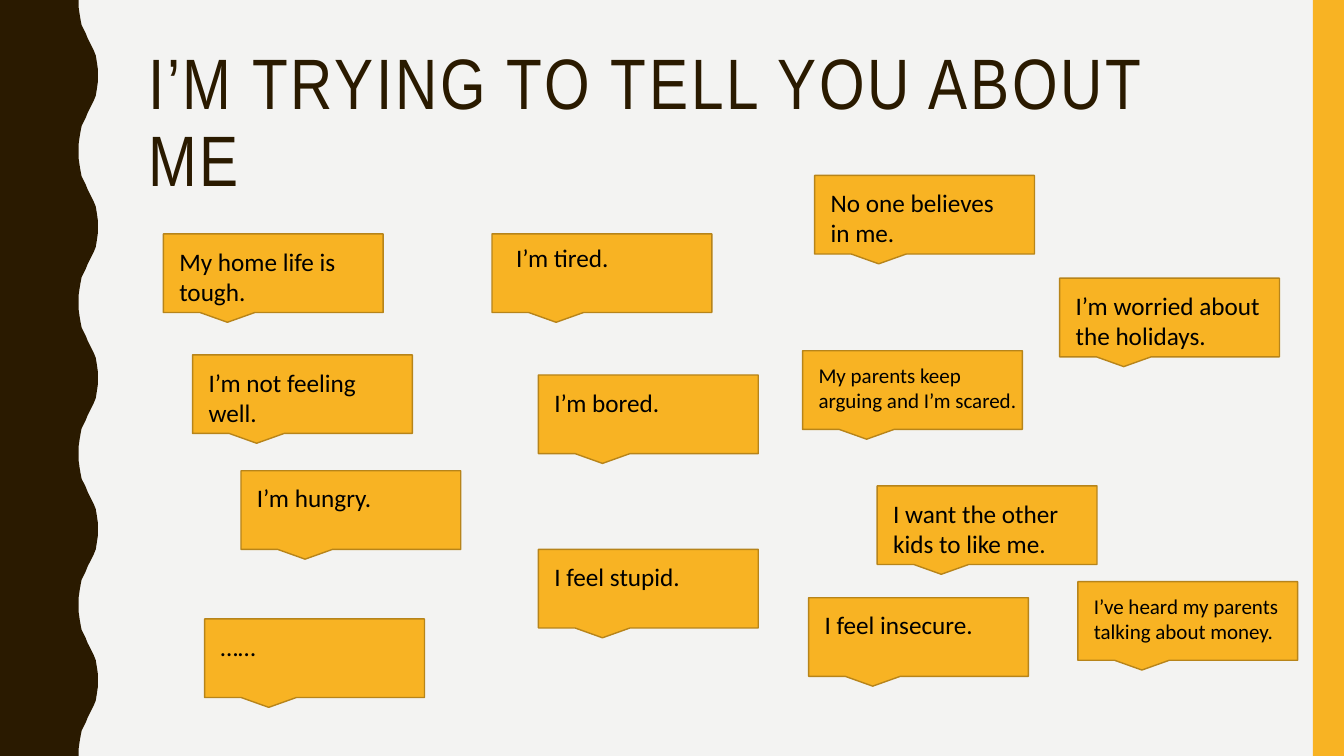
from pptx import Presentation
from pptx.dml.color import RGBColor
from pptx.enum.shapes import MSO_SHAPE as Shape
from pptx.enum.text import MSO_ANCHOR as Anchor, MSO_AUTO_SIZE as AutoSize
from pptx.util import Inches, Pt

WIDTH, HEIGHT = 13.33, 7.5
BROWN, AMBER, AMBER_EDGE = "2A1A00", "F8B323", "B7841A"
PAPER, BLACK = "F3F3F2", "000000"

# One half wave of the left border: x and y in inches
HALF_WAVE = [(0.78, 0), (0.78, 0.07), (0.79, 0.14), (0.8, 0.2), (0.81, 0.25),
             (0.83, 0.29), (0.85, 0.33), (0.87, 0.38), (0.89, 0.42), (0.91, 0.46),
             (0.93, 0.5), (0.95, 0.55), (0.96, 0.61), (0.97, 0.68), (0.97, 0.75)]
WAVE_LENGTH, WAVE_COUNT = 1.5, 5

CALLOUT_SIZE = (2.18, 0.78)
# Callout left and top, wording, and changes to the usual text format
CALLOUTS = [
    (1.62, 2.32, "My home life is tough.", {}),
    (4.88, 2.32, "I’m tired.", {"shift": (0.14, 0.04)}),
    (2.39, 4.67, "I’m hungry.", {}),
    (7.96, 3.48, "My parents keep arguing and I’m scared.", {"size": 15, "width": 2.18}),
    (5.34, 5.45, "I feel stupid.", {}),
    (8.7, 4.82, "I want the other kids to like me.", {}),
    (8.08, 1.74, "No one believes in me.", {}),
    (5.34, 3.72, "I’m bored.", {}),
    (1.91, 3.52, "I’m not feeling well.", {}),
    (8.02, 5.93, "I feel insecure.", {}),
    (2.03, 6.14, "……", {}),
    (10.51, 2.76, "I’m worried about the holidays.", {}),
    (10.69, 5.77, "I’ve heard my parents talking about money.", {"size": 15}),
]


def color(value):
    return RGBColor.from_string(value)


def assign(target, values):
    for name, value in values.items():
        setattr(target, name, value)


class Painter:
    """Holds the style and the current slide."""

    title_font, body_font = "Arial Narrow", "Calibri"

    def __init__(self, page):
        self.page = page

    def background(self, fill):
        self.page.background.fill.solid()
        self.page.background.fill.fore_color.rgb = color(fill)

    def paint(self, shape, fill, edge=None):
        shape.shadow.inherit = False
        shape.fill.solid()
        shape.fill.fore_color.rgb = color(fill)
        if edge:
            shape.line.color.rgb = color(edge)
            shape.line.width = Pt(1)
        else:
            shape.line.fill.background()

    def preset(self, kind, left, top, width, height, fill, edge=None):
        place = map(Inches, (left, top, width, height))
        self.paint(self.page.shapes.add_shape(kind, *place), fill, edge)

    def outline(self, points, fill):
        start, *rest = [(Inches(x), Inches(y)) for x, y in points]
        builder = self.page.shapes.build_freeform(*start)
        builder.add_line_segments(rest, close=True)
        self.paint(builder.convert_to_shape(), fill)

    def text(self, left, top, width, height, words, font, size, fill,
             spacing=None, frame_format=None, para_format=None):
        place = map(Inches, (left, top, width, height))
        frame = self.page.shapes.add_textbox(*place).text_frame
        assign(frame, {"word_wrap": True, **(frame_format or {})})
        para = frame.paragraphs[0]
        assign(para, para_format or {})
        span = para.add_run()
        span.text = words
        assign(span.font, {"name": font, "size": Pt(size)})
        span.font.color.rgb = color(fill)
        if spacing:
            span._r.get_or_add_rPr().set("spc", str(spacing * 100))

    def title(self, words):
        self.text(1.37, 0.42, 11.13, 1.63, words, self.title_font, 51, BROWN, spacing=2,
                  frame_format={"vertical_anchor": Anchor.MIDDLE},
                  para_format={"line_spacing": 0.9})

    def callout(self, left, top, words, size=18, width=2.05, shift=(0.06, 0.07)):
        self.preset(Shape.RECTANGULAR_CALLOUT, left, top, *CALLOUT_SIZE, AMBER, AMBER_EDGE)
        height = 0.4 if len(words) < 18 else 0.71 if size == 18 else 0.61
        self.text(left + shift[0], top + shift[1], width, height, words,
                  self.body_font, size, BLACK,
                  frame_format={"auto_size": AutoSize.SHAPE_TO_FIT_TEXT})


def wave_border():
    wave = HALF_WAVE + [(x, WAVE_LENGTH - y) for x, y in HALF_WAVE[-2::-1]]
    edge = [(x, y + WAVE_LENGTH * turn) for turn in range(WAVE_COUNT) for x, y in wave]
    return [(0, 0), *edge, (0, HEIGHT)]


def main():
    deck = Presentation()
    assign(deck, {"slide_width": Inches(WIDTH), "slide_height": Inches(HEIGHT)})
    painter = Painter(deck.slides.add_slide(deck.slide_layouts[6]))

    # Background and side borders
    painter.background(PAPER)
    painter.outline(wave_border(), BROWN)
    painter.preset(Shape.RECTANGLE, 13.02, 0, 0.31, HEIGHT, AMBER)

    # Title and callouts
    painter.title("I’M TRYING TO TELL YOU ABOUT ME")
    for left, top, words, changes in CALLOUTS:
        painter.callout(left, top, words, **changes)

    deck.save("out.pptx")


if __name__ == "__main__":
    main()
